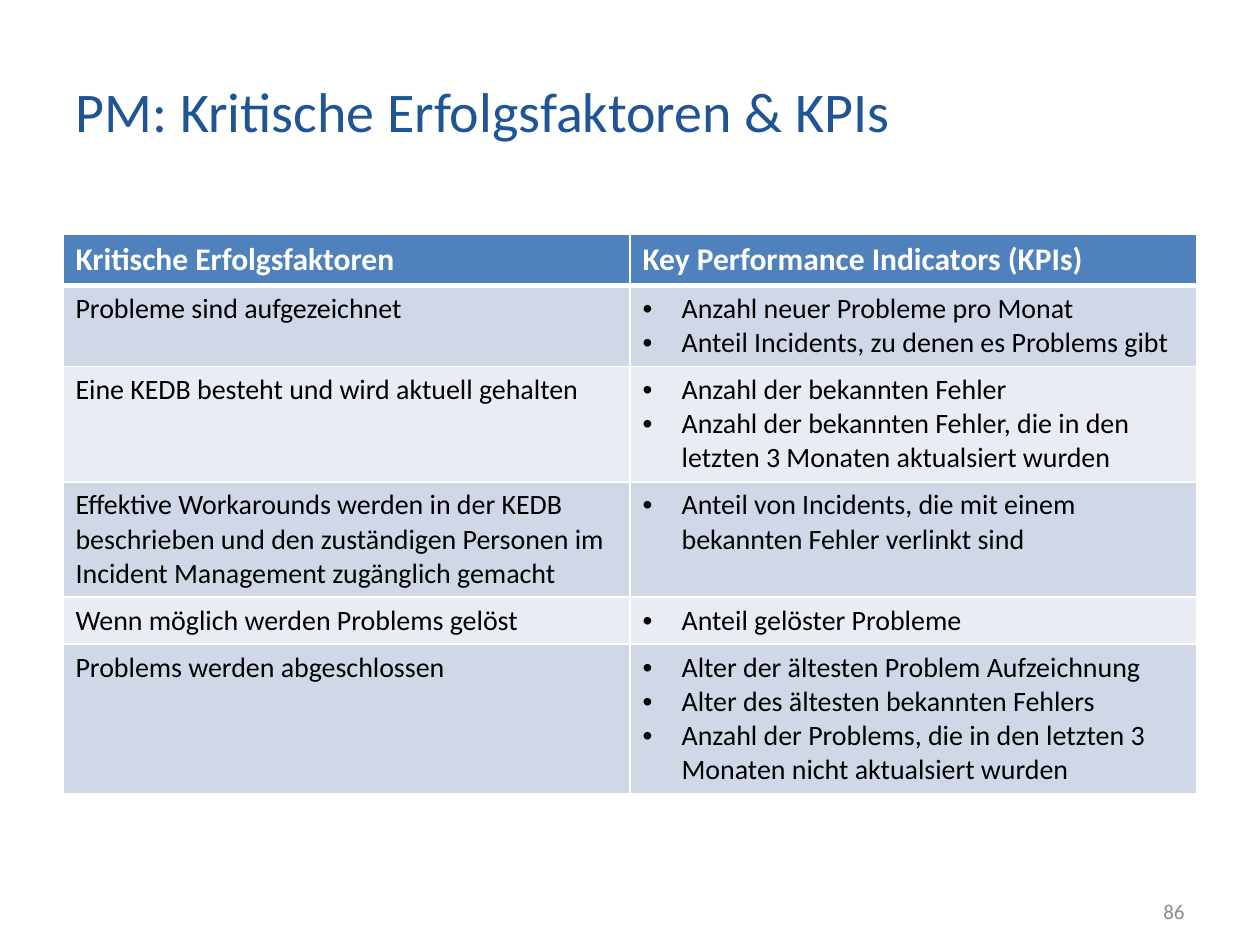
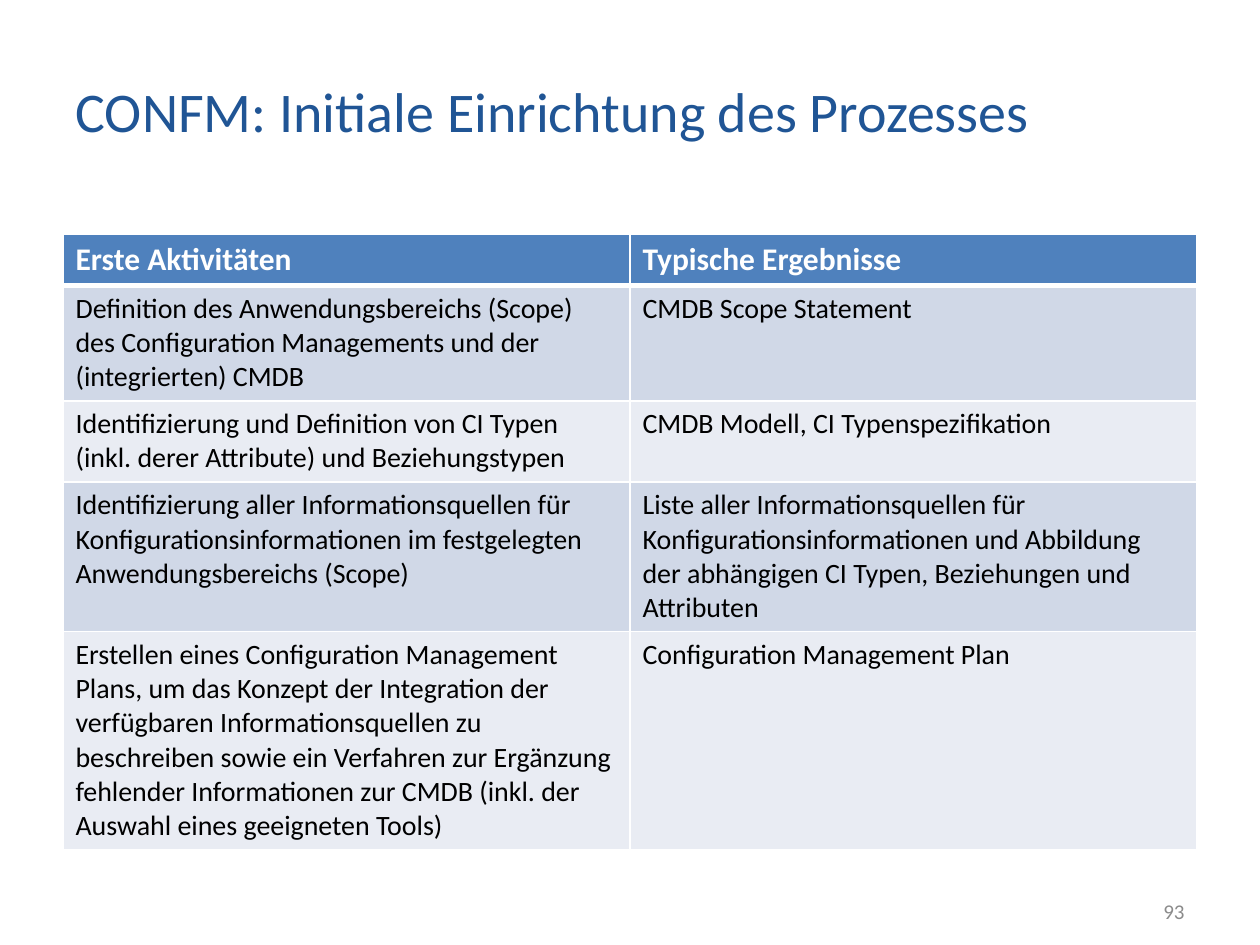
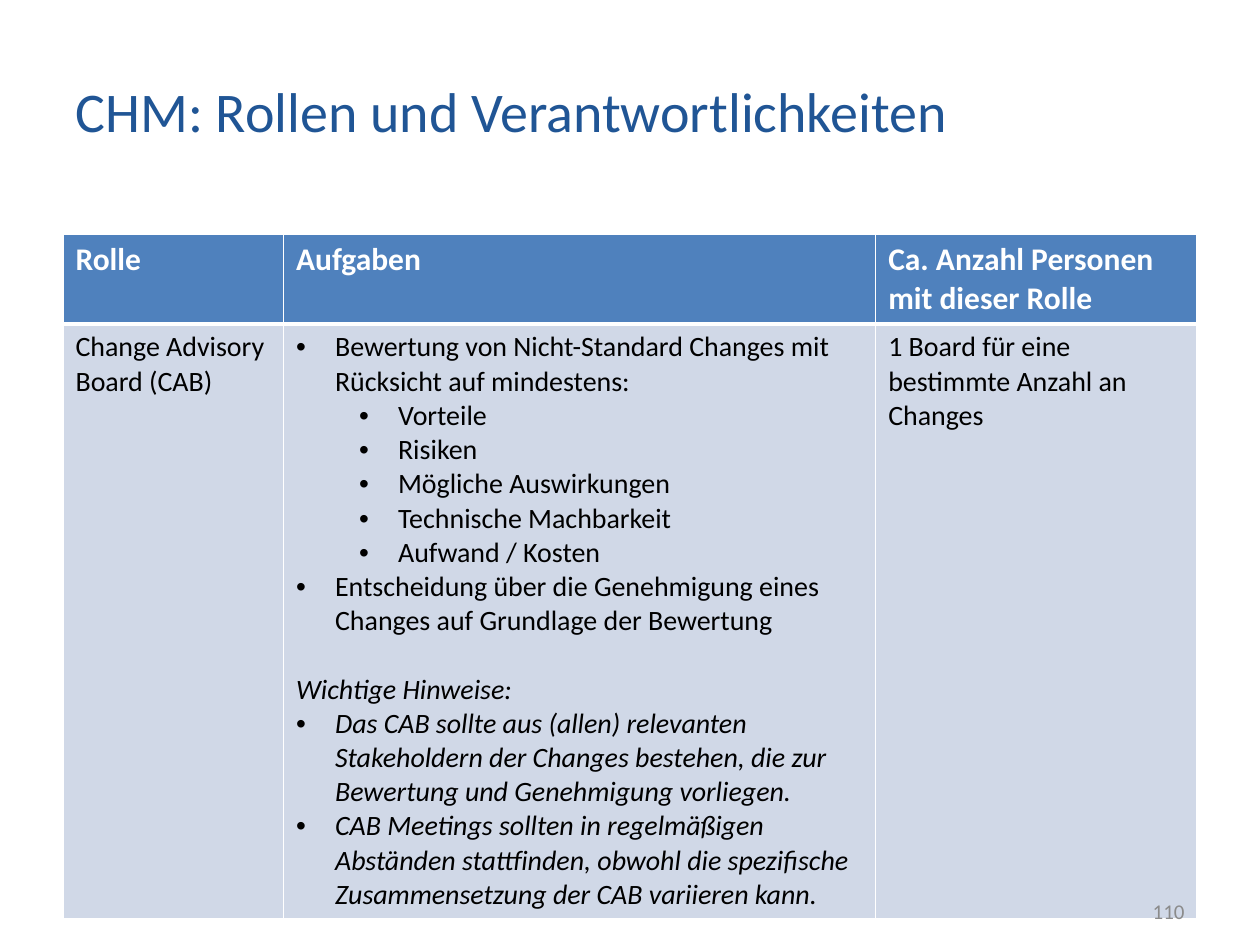
from lxml.etree import SubElement
from pptx import Presentation
from pptx.dml.color import RGBColor
from pptx.enum.text import MSO_ANCHOR as Anchor, PP_ALIGN as Align
from pptx.oxml import parse_xml
from pptx.oxml.ns import nsdecls, qn
from pptx.util import Inches, Pt

FONT = "Calibri"
TITLE_BLUE = RGBColor(0x20, 0x55, 0x95)
HEADER_BLUE = RGBColor(0x4F, 0x81, 0xBD)
BAND_DARK = RGBColor(0xD0, 0xD8, 0xE7)
BAND_LIGHT = RGBColor(0xE9, 0xEC, 0xF3)
WHITE = RGBColor(0xFF, 0xFF, 0xFF)
BLACK = RGBColor(0, 0, 0)
NUMBER_GRAY = RGBColor(0x8B, 0x8B, 0x8B)

MARGIN = Inches(0.5)
TABLE_TOP = Inches(1.86)
CELL_PADDING = 0.1
HEADER_LINE, BODY_LINE = 0.25, 0.22
BULLET_INDENT, LEVEL_STEP = 0.31, 0.5
THIN, THICK = Pt(0.96), Pt(3)

# Each row is its number of text lines followed by its cells.
# A cell is plain text or a list of (bullet depth, italic, text).
SLIDES = [
    ("PM: Kritische Erfolgsfaktoren & KPIs", "86", [4.5, 4.5], [
        (1, "Kritische Erfolgsfaktoren", "Key Performance Indicators (KPIs)"),
        (2, "Probleme sind aufgezeichnet", [
            (1, False, "Anzahl neuer Probleme pro Monat"),
            (1, False, "Anteil Incidents, zu denen es Problems gibt")]),
        (3, "Eine KEDB besteht und wird aktuell gehalten", [
            (1, False, "Anzahl der bekannten Fehler"),
            (1, False, "Anzahl der bekannten Fehler, die in den letzten 3 Monaten "
                       "aktualsiert wurden")]),
        (3, "Effektive Workarounds werden in der KEDB beschrieben und den "
            "zuständigen Personen im Incident Management zugänglich gemacht", [
            (1, False, "Anteil von Incidents, die mit einem bekannten Fehler "
                       "verlinkt sind")]),
        (1, "Wenn möglich werden Problems gelöst", [
            (1, False, "Anteil gelöster Probleme")]),
        (4, "Problems werden abgeschlossen", [
            (1, False, "Alter der ältesten Problem Aufzeichnung"),
            (1, False, "Alter des ältesten bekannten Fehlers"),
            (1, False, "Anzahl der Problems, die in den letzten 3 Monaten nicht "
                       "aktualsiert wurden")]),
    ]),
    ("CONFM: Initiale Einrichtung des Prozesses", "93", [4.5, 4.5], [
        (1, "Erste Aktivitäten", "Typische Ergebnisse"),
        (3, "Definition des Anwendungsbereichs (Scope) des Configuration "
            "Managements und der (integrierten) CMDB", "CMDB Scope Statement"),
        (2, "Identifizierung und Definition von CI Typen (inkl. derer Attribute) "
            "und Beziehungstypen", "CMDB Modell, CI Typenspezifikation"),
        (4, "Identifizierung aller Informationsquellen für "
            "Konfigurationsinformationen im festgelegten Anwendungsbereichs (Scope)",
            "Liste aller Informationsquellen für Konfigurationsinformationen und "
            "Abbildung der abhängigen CI Typen, Beziehungen und Attributen"),
        (6, "Erstellen eines Configuration Management Plans, um das Konzept der "
            "Integration der verfügbaren Informationsquellen zu beschreiben sowie "
            "ein Verfahren zur Ergänzung fehlender Informationen zur CMDB (inkl. "
            "der Auswahl eines geeigneten Tools)", "Configuration Management Plan"),
    ]),
    ("CHM: Rollen und Verantwortlichkeiten", "110", [1.75, 4.7, 2.55], [
        (2, "Rolle", "Aufgaben", "Ca. Anzahl Personen mit dieser Rolle"),
        (17, "Change Advisory Board (CAB)", [
            (1, False, "Bewertung von Nicht-Standard Changes mit Rücksicht auf "
                       "mindestens:"),
            (2, False, "Vorteile"),
            (2, False, "Risiken"),
            (2, False, "Mögliche Auswirkungen"),
            (2, False, "Technische Machbarkeit"),
            (2, False, "Aufwand / Kosten"),
            (1, False, "Entscheidung über die Genehmigung eines Changes auf "
                       "Grundlage der Bewertung"),
            (0, True, "Wichtige Hinweise:"),
            (1, True, "Das CAB sollte aus (allen) relevanten Stakeholdern der Changes "
                      "bestehen, die zur Bewertung und Genehmigung vorliegen."),
            (1, True, "CAB Meetings sollten in regelmäßigen Abständen stattfinden, "
                      "obwohl die spezifische Zusammensetzung der CAB variieren kann.")],
            "1 Board für eine bestimmte Anzahl an Changes"),
    ]),
]


def style(paragraph, size, color, bold=False, italic=False):
    for run in paragraph.runs:
        run.font.name, run.font.size = FONT, Pt(size)
        run.font.bold, run.font.italic = bold, italic
        run.font.color.rgb = color


def fill_cell(cell, content, is_header, band):
    cell.fill.solid()
    cell.fill.fore_color.rgb = band
    # Borders stand before the fill in the cell properties
    for place, side in enumerate("LRTB"):
        width = THICK if is_header and side == "B" else THIN
        cell._tc.get_or_add_tcPr().insert(place, parse_xml(
            f'<a:ln{side} {nsdecls("a")} w="{int(width)}"><a:solidFill>'
            f'<a:srgbClr val="{WHITE}"/></a:solidFill></a:ln{side}>'))

    entries = [(0, False, content)] if isinstance(content, str) else content
    for position, (depth, italic, text) in enumerate(entries):
        frame = cell.text_frame
        paragraph = frame.add_paragraph() if position else frame.paragraphs[0]
        paragraph.text = text
        if depth:
            paragraph.level = depth - 1
            props = paragraph._p.get_or_add_pPr()
            props.set("marL", str(Inches(BULLET_INDENT + LEVEL_STEP * (depth - 1))))
            props.set("indent", str(-Inches(BULLET_INDENT)))
            SubElement(props, qn("a:buFont")).set("typeface", "Arial")
            SubElement(props, qn("a:buChar")).set("char", "•")
        elif position:
            paragraph.space_before = Pt(19.5)
        style(paragraph, 18 if is_header else 16, WHITE if is_header else BLACK,
              is_header, italic)


prs = Presentation()
prs.slide_width, prs.slide_height = Inches(10), Inches(7.5)
content_width = prs.slide_width - 2 * MARGIN

for heading, number, columns, rows in SLIDES:
    slide = prs.slides.add_slide(prs.slide_layouts[5])

    # Title
    title = slide.shapes.title
    title.left, title.top = MARGIN, Inches(0.3)
    title.width, title.height = Inches(8.04), Inches(1.15)
    title.text_frame.text = heading
    title.text_frame.vertical_anchor = Anchor.MIDDLE
    title.text_frame.paragraphs[0].alignment = Align.LEFT
    style(title.text_frame.paragraphs[0], 32, TITLE_BLUE)

    # Table with a header and alternating bands
    table_height = Inches(0.81) * len(rows) // 2
    table_frame = slide.shapes.add_table(len(rows), len(columns), MARGIN, TABLE_TOP,
                                         content_width, table_height)
    table = table_frame.table
    for column, width in zip(table.columns, columns):
        column.width = Inches(width)
    for r, (lines, *cells) in enumerate(rows):
        line_height = BODY_LINE if r else HEADER_LINE
        table.rows[r].height = Inches(CELL_PADDING + lines * line_height)
        band = HEADER_BLUE if r == 0 else BAND_DARK if r % 2 else BAND_LIGHT
        for c, content in enumerate(cells):
            fill_cell(table.cell(r, c), content, r == 0, band)
    table_frame.height = table_height

    # Page number
    number_width = Inches(2.33)
    page = slide.shapes.add_textbox(prs.slide_width - MARGIN - number_width,
                                    Inches(7.03), number_width, Inches(0.4))
    page.text_frame.text = number
    page.text_frame.word_wrap = True
    page.text_frame.vertical_anchor = Anchor.MIDDLE
    page.text_frame.paragraphs[0].alignment = Align.RIGHT
    style(page.text_frame.paragraphs[0], 12, NUMBER_GRAY)

prs.save("out.pptx")
